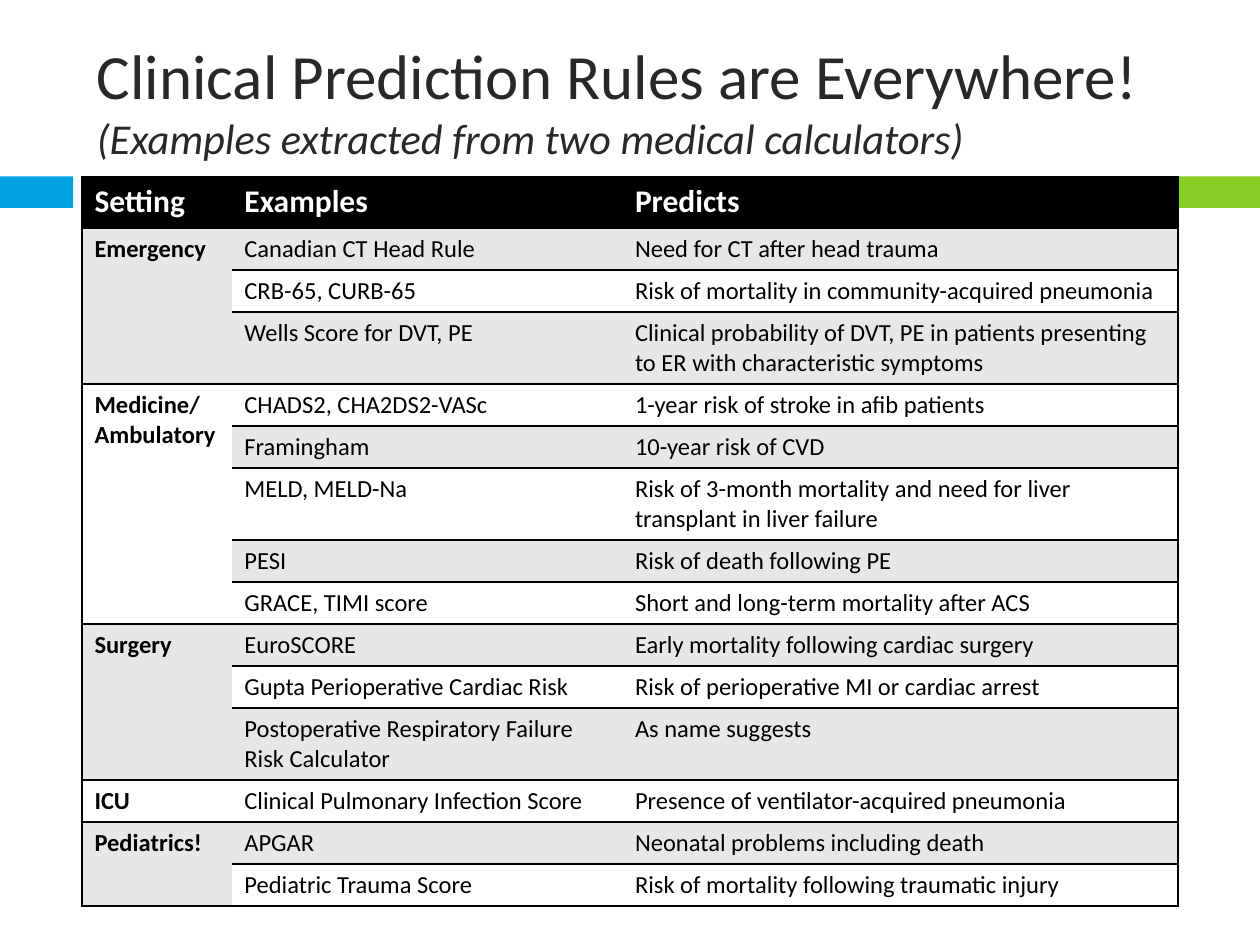
from dataclasses import dataclass

from lxml import etree
from pptx import Presentation
from pptx.dml.color import RGBColor
from pptx.enum.shapes import MSO_SHAPE
from pptx.enum.text import MSO_ANCHOR
from pptx.oxml.ns import qn
from pptx.util import Inches, Pt

RECTANGLE = MSO_SHAPE.RECTANGLE
MIDDLE = MSO_ANCHOR.MIDDLE
BLANK_LAYOUT = 6


@dataclass(frozen=True)
class Theme:
    font: str = "Calibri"
    blue: str = "00A2E6"
    green: str = "86CE24"
    title: str = "282828"
    black: str = "000000"
    white: str = "FFFFFF"
    band: str = "E7E7E7"
    title_size: float = 36
    subtitle_size: float = 24.3
    header_size: float = 18
    body_size: float = 14
    border: float = 1


THEME = Theme()

TITLE = "Clinical Prediction Rules are Everywhere!"
SUBTITLE = "(Examples extracted from two medical calculators)"
HEADERS = ("Setting", "Examples", "Predicts")
COLUMN_WIDTHS = (1.19, 3.1, 4.41)
HEADER_HEIGHT, ROW_HEIGHT, TALL_ROW_HEIGHT = 0.41, 0.33, 0.57
TALL_ROWS = (3, 6, 11)
RULES_BY_SETTING = {
    "Emergency": [
        ("Canadian CT Head Rule", "Need for CT after head trauma"),
        ("CRB-65, CURB-65", "Risk of mortality in community-acquired pneumonia"),
        ("Wells Score for DVT, PE",
         "Clinical probability of DVT, PE in patients presenting to ER "
         "with characteristic symptoms"),
    ],
    "Medicine/ Ambulatory": [
        ("CHADS2, CHA2DS2-VASc", "1-year risk of stroke in afib patients"),
        ("Framingham", "10-year risk of CVD"),
        ("MELD, MELD-Na",
         "Risk of 3-month mortality and need for liver transplant in liver failure"),
        ("PESI", "Risk of death following PE"),
        ("GRACE, TIMI score", "Short and long-term mortality after ACS"),
    ],
    "Surgery": [
        ("EuroSCORE", "Early mortality following cardiac surgery"),
        ("Gupta Perioperative Cardiac Risk", "Risk of perioperative MI or cardiac arrest"),
        ("Postoperative Respiratory Failure Risk Calculator", "As name suggests"),
    ],
    "ICU": [
        ("Clinical Pulmonary Infection Score", "Presence of ventilator-acquired pneumonia"),
    ],
    "Pediatrics!": [
        ("APGAR", "Neonatal problems including death"),
        ("Pediatric Trauma Score", "Risk of mortality following traumatic injury"),
    ],
}


def format_run(run, size, color, bold=False, italic=False):
    run.font.name = THEME.font
    run.font.size = Pt(size)
    run.font.color.rgb = RGBColor.from_string(color)
    run.font.bold = bold
    run.font.italic = italic


def add_bar(slide, left, width, color):
    bar = slide.shapes.add_shape(
        RECTANGLE, Inches(left), Inches(1.4), Inches(width), Inches(0.25))
    bar.shadow.inherit = False
    bar.fill.solid()
    bar.fill.fore_color.rgb = RGBColor.from_string(color)
    bar.line.fill.background()


def add_title(slide):
    title_box = slide.shapes.add_textbox(
        Inches(0.67), Inches(0.25), Inches(8.92), Inches(1.08))
    frame = title_box.text_frame
    frame.word_wrap = True
    frame.vertical_anchor = MIDDLE
    paragraph = frame.paragraphs[0]
    paragraph.text = f"{TITLE}\v{SUBTITLE}"
    title_run, subtitle_run = paragraph.runs
    format_run(title_run, THEME.title_size, THEME.title)
    format_run(subtitle_run, THEME.subtitle_size, THEME.title, italic=True)


def set_borders(cell, visible_sides):
    """Draw the sides named by L, R, T and B; hide the others."""
    properties = cell._tc.get_or_add_tcPr()
    for side in "LRTB":
        line = etree.SubElement(properties, qn(f"a:ln{side}"))
        if side in visible_sides:
            line.set("w", str(Pt(THEME.border)))
            fill = etree.SubElement(line, qn("a:solidFill"))
            etree.SubElement(fill, qn("a:srgbClr"), val=THEME.black)
        else:
            etree.SubElement(line, qn("a:noFill"))


def style_cell(cell, text, fill, borders, size=THEME.body_size, color=THEME.black, bold=False):
    set_borders(cell, borders)
    cell.fill.solid()
    cell.fill.fore_color.rgb = RGBColor.from_string(fill)
    cell.text = text
    for run in cell.text_frame.paragraphs[0].runs:
        format_run(run, size, color, bold)


def band_fill(row):
    return THEME.band if row % 2 else THEME.white


def fill_setting(table, first_row, setting, rules):
    """Write one setting and its rules, with the setting merged over its rows."""
    last_row = first_row + len(rules) - 1
    for row, (example, prediction) in enumerate(rules, first_row):
        is_first = row == first_row
        edges = "L" + "T" * is_first + "B" * (is_first or row == last_row)
        style_cell(table.cell(row, 0), setting if is_first else "",
                   band_fill(first_row), edges, bold=True)
        style_cell(table.cell(row, 1), example, band_fill(row), "TB")
        style_cell(table.cell(row, 2), prediction, band_fill(row), "TBR")
    if last_row > first_row:
        table.cell(first_row, 0).merge(table.cell(last_row, 0))


def add_rules_table(slide):
    row_count = 1 + sum(len(rules) for rules in RULES_BY_SETTING.values())
    table = slide.shapes.add_table(
        row_count, len(HEADERS), Inches(0.65), Inches(1.4), Inches(8.7), Inches(5.77)).table
    for column, width in zip(table.columns, COLUMN_WIDTHS):
        column.width = Inches(width)
    for index, row in enumerate(table.rows):
        row.height = Inches(TALL_ROW_HEIGHT if index in TALL_ROWS else ROW_HEIGHT)
    table.rows[0].height = Inches(HEADER_HEIGHT)

    for column, (heading, borders) in enumerate(zip(HEADERS, ("LTB", "TB", "TBR"))):
        style_cell(table.cell(0, column), heading, THEME.black, borders,
                   THEME.header_size, THEME.white, bold=True)
    first_row = 1
    for setting, rules in RULES_BY_SETTING.items():
        fill_setting(table, first_row, setting, rules)
        first_row += len(rules)


def main():
    presentation = Presentation()
    presentation.slide_width = Inches(10)
    presentation.slide_height = Inches(7.5)
    slide = presentation.slides.add_slide(presentation.slide_layouts[BLANK_LAYOUT])
    add_bar(slide, 0, 0.58, THEME.blue)
    add_bar(slide, 0.65, 9.35, THEME.green)
    add_title(slide)
    add_rules_table(slide)
    presentation.save("out.pptx")


if __name__ == "__main__":
    main()
